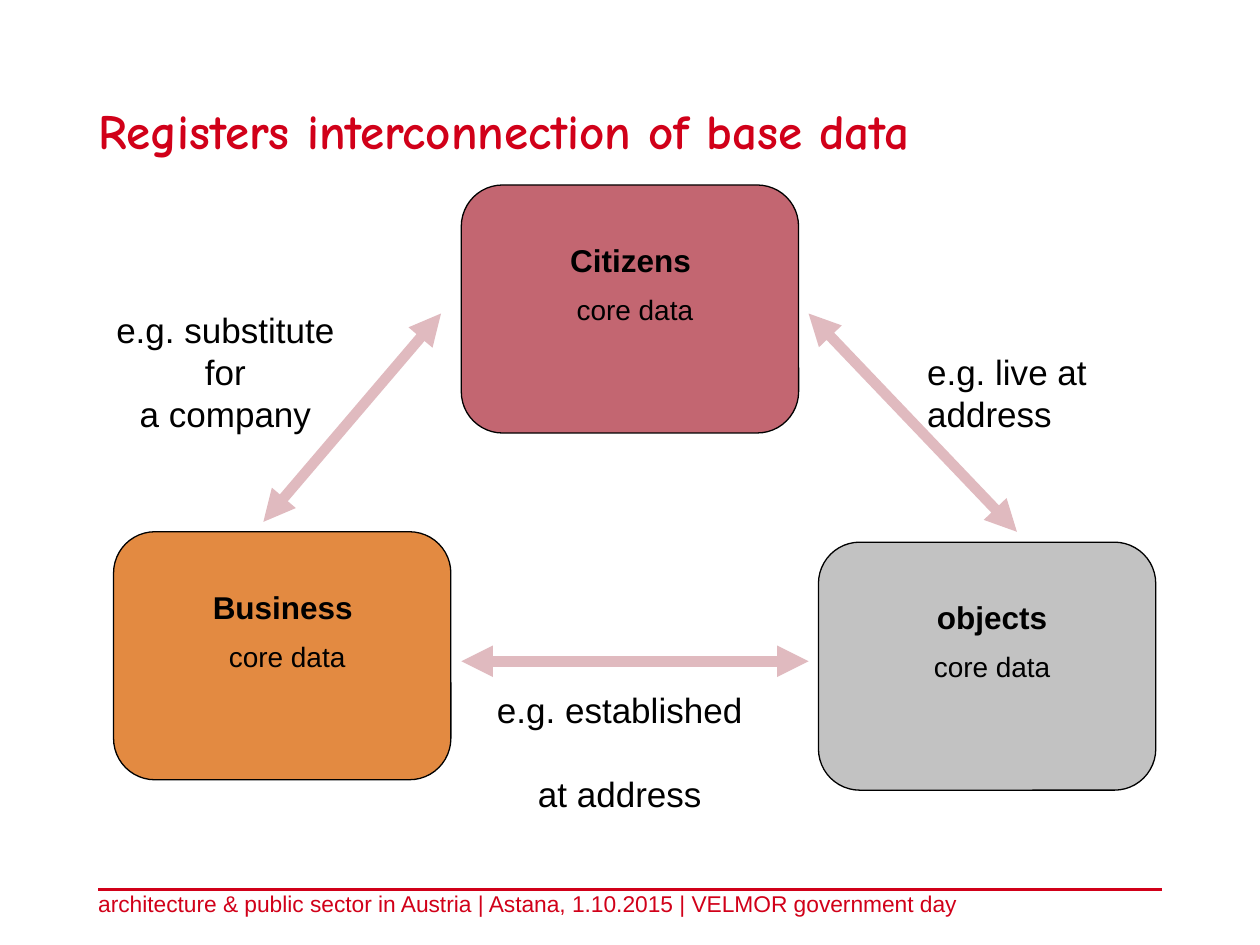
from lxml.etree import SubElement
from pptx import Presentation
from pptx.dml.color import RGBColor
from pptx.enum.shapes import MSO_CONNECTOR, MSO_SHAPE
from pptx.enum.text import MSO_ANCHOR, MSO_AUTO_SIZE, PP_ALIGN
from pptx.oxml.ns import qn
from pptx.util import Cm, Pt

RED = RGBColor(0xD1, 0x00, 0x19)
DARK_RED = RGBColor(0x9C, 0x00, 0x13)
ORANGE = RGBColor(0xE3, 0x8A, 0x41)
GREY = RGBColor(0xC2, 0xC2, 0xC2)
PINK = RGBColor(0xE0, 0xBA, 0xBF)
BLACK = RGBColor(0, 0, 0)
LEFT, CENTER = PP_ALIGN.LEFT, PP_ALIGN.CENTER

# Content; positions and sizes in cm
TITLE = "Registers interconnection of base data"
FOOTER = "architecture & public sector in Austria | Astana, 1.10.2015 | VELMOR government day"
CARD_W, CARD_H = 6.8, 5.0
CARDS = [  # heading, left, top, fill, opacity in percent
    ("Citizens ", 9.3, 3.73, DARK_RED, 60),
    ("Business ", 2.29, 10.72, ORANGE, 100),
    ("objects", 16.5, 10.93, GREY, 100),
]
ARROWS = [  # x1, y1, x2, y2
    (8.89, 6.32, 5.31, 10.52),
    (16.3, 13.33, 9.3, 13.33),
    (16.3, 6.32, 20.5, 10.72),
]
LABELS = [  # paragraphs, box, alignment, space before later paragraphs
    (["e.g. live at address"], (18.69, 7.06, 4.2, 1.7), LEFT, 0),
    (["e.g. established", "at address"], (9.93, 13.87, 5.13, 2.55), CENTER, 24),
    (["e.g. substitute for", "a company"], (2.13, 6.22, 4.83, 2.55), CENTER, 0),
]


def format_font(font, **values):
    color = values.pop("color", BLACK)
    for name, value in {"name": "Arial", "bold": False, **values}.items():
        setattr(font, name, value)
    font.color.rgb = color


def format_frame(tf, margins=(0, 0)):
    side, edge = margins
    settings = {"word_wrap": True, "auto_size": MSO_AUTO_SIZE.NONE,
                "vertical_anchor": MSO_ANCHOR.TOP,
                "margin_left": Cm(side), "margin_right": Cm(side),
                "margin_top": Cm(edge), "margin_bottom": Cm(edge)}
    for name, value in settings.items():
        setattr(tf, name, value)


def add_text(shapes, lines, box, align=LEFT, gap=0, margins=(0, 0)):
    """Add a text box; each line is (text, font values)."""
    sp = shapes.add_textbox(*map(Cm, box))
    tf = sp.text_frame
    format_frame(tf, margins)
    for i, (text, font) in enumerate(lines):
        p = tf.add_paragraph() if i else tf.paragraphs[0]
        p.alignment = align
        if i:
            p.space_before = Pt(gap)
        r = p.add_run()
        r.text = text
        format_font(r.font, **font)
    return sp


def add_line(s, ends, color, width, arrows=False):
    line = s.shapes.add_connector(MSO_CONNECTOR.STRAIGHT, *map(Cm, ends))
    line.line.color.rgb = color
    line.line.width = Pt(width)
    if arrows:
        ln = line.line._get_or_add_ln()
        for end in ("a:headEnd", "a:tailEnd"):
            SubElement(ln, qn(end), type="triangle")
    SubElement(line._element.spPr, qn("a:effectLst"))


def add_card(s, heading, left, top, color, opacity):
    group = s.shapes.add_group_shape()
    sp = group.shapes.add_shape(MSO_SHAPE.FLOWCHART_ALTERNATE_PROCESS,
                                Cm(left), Cm(top), Cm(CARD_W), Cm(CARD_H))
    sp.shadow.inherit = False
    sp.fill.solid()
    sp.fill.fore_color.rgb = color
    sp.line.color.rgb = BLACK
    sp.line.width = Pt(0.75)
    lines = [(heading, {"size": Pt(18), "bold": True}),
             ("core data", {"size": Pt(16)})]
    text = add_text(group.shapes, lines, (left + 0.4, top + 1, 6.2, 2.03),
                    CENTER, 8, (0.25, 0.13))
    if opacity < 100:
        rgb = sp._element.spPr.find(qn("a:solidFill")).find(qn("a:srgbClr"))
        SubElement(rgb, qn("a:alpha"), val=str(opacity * 1000))
    else:
        text.fill.solid()
        text.fill.fore_color.rgb = color


prs = Presentation()
prs.slide_width, prs.slide_height = Cm(25.4), Cm(19.05)
s = prs.slides.add_slide(prs.slide_layouts[5])

# Title
title = s.shapes.title
title.left, title.top, title.width, title.height = map(Cm, (1.98, 2.03, 21.44, 1.98))
title.text_frame.text = TITLE
format_frame(title.text_frame)
p = title.text_frame.paragraphs[0]
p.alignment = LEFT
format_font(p.runs[0].font, name="Comic Neue", size=Pt(28), bold=True, color=RED)

# Footer
add_line(s, (1.98, 17.93, 23.42, 17.93), RED, 1.5)
add_text(s.shapes, [(FOOTER, {"size": Pt(13), "color": RED})], (1.98, 17.93, 18.06, 0.56))

# Registers and their links
for card in CARDS:
    add_card(s, *card)
for ends in ARROWS:
    add_line(s, ends, PINK, 6, arrows=True)
for texts, box, align, gap in LABELS:
    add_text(s.shapes, [(t, {"size": Pt(20)}) for t in texts], box, align, gap)

prs.save("out.pptx")
